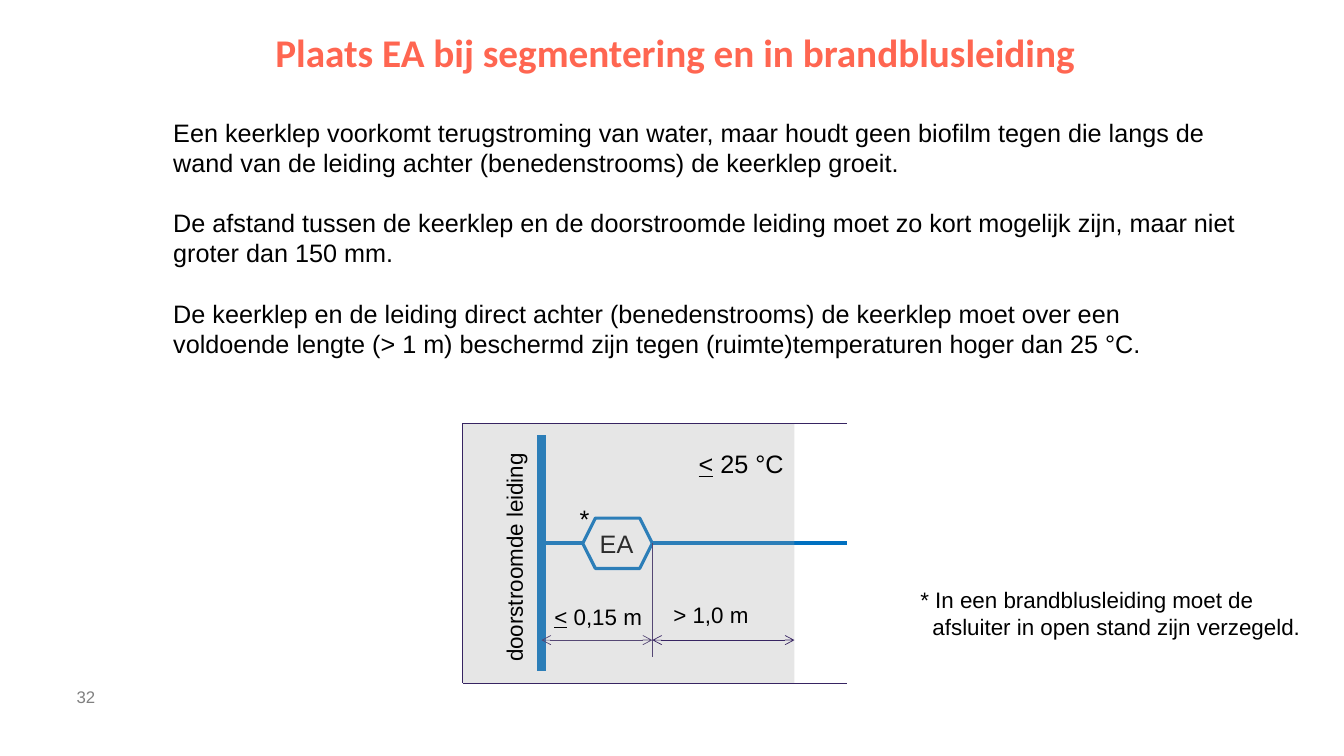
from dataclasses import dataclass

from lxml import etree
from pptx import Presentation
from pptx.dml.color import RGBColor
from pptx.enum.shapes import MSO_CONNECTOR, MSO_SHAPE
from pptx.enum.text import MSO_ANCHOR, PP_ALIGN
from pptx.oxml.ns import qn
from pptx.util import Emu, Inches, Pt

STRAIGHT = MSO_CONNECTOR.STRAIGHT
RECT, HEXAGON = MSO_SHAPE.RECTANGLE, MSO_SHAPE.HEXAGON
TOP, MIDDLE = MSO_ANCHOR.TOP, MSO_ANCHOR.MIDDLE
LEFT, CENTER = PP_ALIGN.LEFT, PP_ALIGN.CENTER

BLACK = RGBColor(0, 0, 0)
WHITE = RGBColor(0xFF, 0xFF, 0xFF)
GRAY = RGBColor(0x80, 0x80, 0x80)
SHADE = RGBColor(0xA6, 0xA6, 0xA6)
CORAL = RGBColor(0xFF, 0x66, 0x51)
BLUE = RGBColor(0x00, 0x70, 0xC0)
PURPLE = RGBColor(0x37, 0x24, 0x62)

CELL = Inches(0.1)
WALL, MAIN, VALVE, ZONE, END = 45.9, 53.7, 64.7, 78.8, 84
CEIL, PIPE, SIZE, FLOOR = 42, 53.9, 63.5, 67.8


@dataclass
class Box:
    col: float
    row: float
    wide: float
    high: float


@dataclass
class Line:
    col: float
    row: float
    to_col: float
    to_row: float
    color: RGBColor = PURPLE
    width: float = 0.5
    arrows: bool = False


@dataclass
class Para:
    text: str
    gap: float = 0
    indent: float = 0
    mark: str = ""


@dataclass
class Label:
    box: Box
    para: Para
    size: float = 16
    turn: float = 0


def cells(*counts: float) -> list[Emu]:
    return [Emu(round(n * CELL)) for n in counts]


def add_text(slide, box: Box, paras: list[Para], *, size: float = 18,
             font: str = "Arial", color: RGBColor = BLACK, bold: bool = False,
             align=LEFT, anchor=TOP, inset: bool = True, wrap: bool = True,
             turn: float = 0, lead: float | None = None) -> None:
    shape = slide.shapes.add_textbox(*cells(box.col, box.row, box.wide, box.high))
    shape.rotation = turn
    frame = shape.text_frame
    frame.word_wrap = wrap
    frame.vertical_anchor = anchor
    if not inset:
        frame.margin_left = frame.margin_right = 0
        frame.margin_top = frame.margin_bottom = 0
    for i, item in enumerate(paras):
        para = frame.paragraphs[0] if i == 0 else frame.add_paragraph()
        para.alignment = align
        para.line_spacing = lead
        if item.gap:
            para.space_before = Pt(item.gap)
        if item.indent:
            para._p.get_or_add_pPr().set("marL", str(cells(item.indent)[0]))
        for part in filter(None, (item.mark, item.text)):
            run = para.add_run()
            run.text = part
            run.font.size = Pt(size)
            run.font.name = font
            run.font.bold = bold
            run.font.color.rgb = color
            run.font.underline = True if part == item.mark else None


def add_line(slide, line: Line) -> None:
    ends = cells(line.col, line.row, line.to_col, line.to_row)
    wire = slide.shapes.add_connector(STRAIGHT, *ends)
    wire.line.color.rgb = line.color
    wire.line.width = Pt(line.width)
    if line.arrows:
        edge = wire.line._get_or_add_ln()
        for tag in ("a:headEnd", "a:tailEnd"):
            etree.SubElement(edge, qn(tag)).set("type", "arrow")
    etree.SubElement(wire._element.spPr, qn("a:effectLst"))


def add_block(slide, kind, box: Box, fill: RGBColor, *,
              edge: RGBColor | None = None, alpha: int = 100) -> None:
    shape = slide.shapes.add_shape(kind, *cells(box.col, box.row, box.wide, box.high))
    shape.shadow.inherit = False
    shape.fill.solid()
    shape.fill.fore_color.rgb = fill
    if alpha < 100:
        tint = shape._element.spPr.find(qn("a:solidFill"))[0]
        etree.SubElement(tint, qn("a:alpha")).set("val", str(alpha * 1000))
    if edge is None:
        shape.line.fill.background()
    else:
        shape.line.color.rgb = edge
        shape.line.width = Pt(2.25)


BODY = [
    Para("Een keerklep voorkomt terugstroming van water, maar houdt geen biofilm "
         "tegen die langs de"),
    Para("wand van de leiding achter (benedenstrooms) de keerklep groeit."),
    Para("De afstand tussen de keerklep en de doorstroomde leiding moet zo kort "
         "mogelijk zijn, maar niet", gap=21.6),
    Para("groter dan 150 mm."),
    Para("De keerklep en de leiding direct achter (benedenstrooms) de keerklep moet "
         "over een voldoende lengte (> 1 m) beschermd zijn tegen "
         "(ruimte)temperaturen hoger dan 25 °C.", gap=21.6),
]
NOTE = [
    Para("* In een brandblusleiding moet de"),
    Para("afsluiter in open stand zijn verzegeld.", indent=1.2),
]
PIPES = [
    Line(MAIN, 43.2, MAIN, 66.6, BLUE, 6),
    Line(MAIN, PIPE, END, PIPE, BLUE, 3),
]
GAUGES = [
    Line(VALVE, PIPE, VALVE, 65.2),
    Line(MAIN, SIZE, VALVE, SIZE, arrows=True),
]
EDGES = [
    Line(VALVE, SIZE, ZONE, SIZE, arrows=True),
    Line(WALL, CEIL, END, CEIL),
    Line(WALL, FLOOR, END, FLOOR),
    Line(WALL, CEIL, WALL, FLOOR),
]
LABELS = [
    Label(Box(54, 59.3, 10.8, 3.7), Para(" 0,15 m", mark="<")),
    Label(Box(68.3, 44, 10.5, 4), Para(" 25 °C", mark="<"), 18),
    Label(Box(56.5, 49.4, 3, 4), Para("*"), 18),
    Label(Box(39.2, 53, 23.6, 3.7), Para("doorstroomde leiding"), turn=270),
    Label(Box(65.8, 59.1, 10.2, 3.7), Para("> 1,0 m")),
]


def main() -> None:
    deck = Presentation()
    deck.slide_width, deck.slide_height = Inches(13.33), Inches(7.5)
    slide = deck.slides.add_slide(deck.slide_layouts[6])
    add_text(slide, Box(7.6, 67.1, 7.1, 4), [Para("32")], size=12, color=GRAY,
             anchor=MIDDLE, inset=False)
    add_text(slide, Box(4, 2.7, 125.9, 5.4),
             [Para("Plaats EA bij segmentering en in brandblusleiding")],
             size=28, font="Calibri", color=CORAL, bold=True, align=CENTER,
             anchor=MIDDLE, inset=False, lead=0.9)
    add_text(slide, Box(16.2, 11.1, 107.3, 25.2), BODY)
    for pipe in PIPES:
        add_line(slide, pipe)
    add_block(slide, HEXAGON, Box(57.8, 51.4, 6.9, 5), WHITE, edge=BLUE)
    add_text(slide, Box(58.5, 51.9, 5.4, 4), [Para("EA")], wrap=False)
    for gauge in GAUGES:
        add_line(slide, gauge)
    add_block(slide, RECT, Box(WALL, CEIL, ZONE - WALL, FLOOR - CEIL), SHADE, alpha=27)
    for label in LABELS:
        add_text(slide, label.box, [label.para], size=label.size, wrap=False,
                 turn=label.turn)
    add_text(slide, Box(90.3, 57.7, 40.8, 6.4), NOTE, size=16, wrap=False)
    for edge in EDGES:
        add_line(slide, edge)
    deck.save("out.pptx")


if __name__ == "__main__":
    main()
